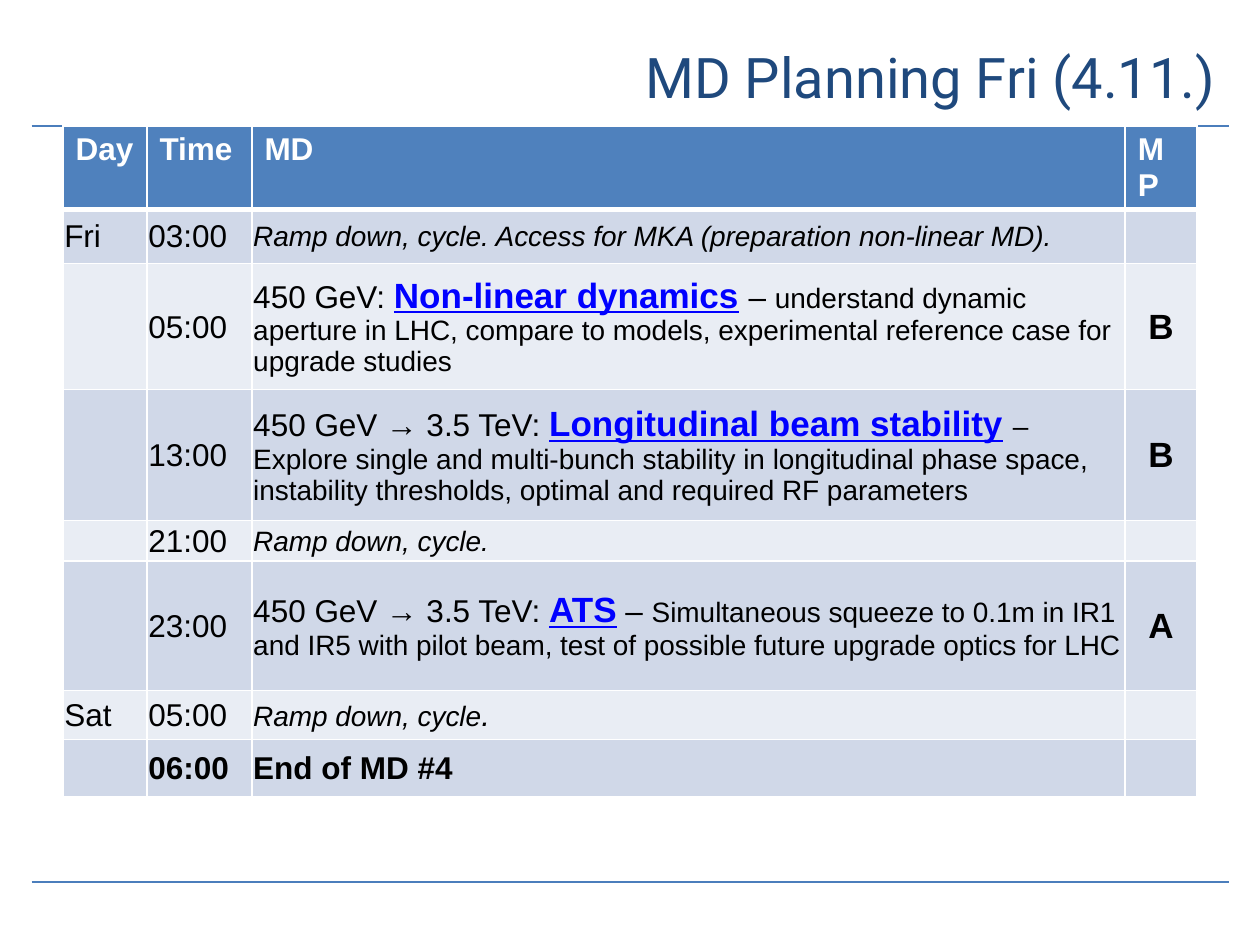
from lxml import etree
from pptx import Presentation
from pptx.dml.color import RGBColor
from pptx.enum.shapes import MSO_CONNECTOR
from pptx.enum.text import MSO_ANCHOR, PP_ALIGN
from pptx.oxml.ns import qn
from pptx.util import Pt

STRAIGHT = MSO_CONNECTOR.STRAIGHT
MIDDLE, TOP = MSO_ANCHOR.MIDDLE, MSO_ANCHOR.TOP
LEFT, CENTER, RIGHT = PP_ALIGN.LEFT, PP_ALIGN.CENTER, PP_ALIGN.RIGHT

# Content: a cell is a list of (text, style) runs
TITLE = "MD Planning Fri (4.11.)"
HEADER = ["Day", "Time", "MD", "MP"]
SCHEDULE = [
    ("Fri", "03:00", [("Ramp down, cycle. Access for MKA (preparation non-linear MD).", "note")], ""),
    ("", "05:00", [
        ("450 GeV: ", "body"), ("Non-linear dynamics", "topic"), (" ", "space"), ("– ", "body"),
        ("understand dynamic aperture in LHC, compare to models, experimental "
         "reference case for upgrade studies", "detail")], "B"),
    ("", "13:00", [
        ("450 GeV → 3.5 TeV: ", "body"), ("Longitudinal beam stability", "topic"), (" ", "space"),
        ("– Explore single and multi-bunch stability in longitudinal phase space, "
         "instability thresholds, optimal and required RF parameters", "detail")], "B"),
    ("", "21:00", [("Ramp down, cycle.", "note")], ""),
    ("", "23:00", [
        ("450 GeV → 3.5 TeV: ", "body"), ("ATS", "topic"), (" – ", "body"),
        ("Simultaneous squeeze to 0.1m in IR1 and IR5 with pilot beam, test of "
         "possible future upgrade optics for LHC", "detail")], "A"),
    ("Sat", "05:00", [("Ramp down, cycle", "note"), (".", "note_end")], ""),
    ("", "06:00", [("End of MD #4", "strong")], ""),
]

# Theme
THEME = {
    "rule": RGBColor(0x4B, 0x7E, 0xBC),
    "header_fill": RGBColor(0x4F, 0x81, 0xBD),
    "bands": [RGBColor(0xD0, 0xD8, 0xE8), RGBColor(0xE9, 0xED, 0xF4)],
    "border": "FFFFFF",
}
BLACK = RGBColor(0, 0, 0)
BLUE = RGBColor(0, 0, 0xFF)
STYLES = {
    "title": {"name": "Roboto", "size": Pt(32), "color": RGBColor(0x1F, 0x49, 0x7D)},
    "header": {"size": Pt(18), "bold": True, "color": RGBColor(0xFF, 0xFF, 0xFF)},
    "body": {"size": Pt(18)},
    "strong": {"size": Pt(18), "bold": True},
    "space": {"size": Pt(20)},
    "topic": {"size": Pt(20), "bold": True, "underline": True, "color": BLUE},
    "detail": {"size": Pt(16)},
    "note": {"size": Pt(16), "italic": True},
    "note_end": {"size": Pt(18), "italic": True},
    "grade": {"size": Pt(20), "bold": True},
}

# Layout in points
RULE_LEFT, RULE_RIGHT, RULE_TOPS = 18, 702, (72, 504)
TITLE_BOX = (126, 12, 576, 63)
TABLE_LEFT, TABLE_TOP = 36, 72
COLUMN_WIDTHS = [48, 60, 499, 41]
ROW_HEIGHTS = [29.5, 31, 72, 75, 23, 74, 28, 33]
BODY_MARGINS = {"margin_left": Pt(0.75), "margin_top": Pt(0.75),
                "margin_right": Pt(0.75), "margin_bottom": Pt(0)}


def format_font(font, style):
    values = {"name": "Arial", "color": BLACK} | STYLES[style]
    font.color.rgb = values.pop("color")
    for attribute, value in values.items():
        setattr(font, attribute, value)


def write_runs(paragraph, runs, alignment):
    paragraph.alignment = alignment
    for text, style in runs:
        run = paragraph.add_run()
        run.text = text
        format_font(run.font, style)
    if not runs:
        format_font(paragraph.font, "body")


def set_borders(cell, top, bottom):
    properties = cell._tc.get_or_add_tcPr()
    for side, width in {"lnL": 1, "lnR": 1, "lnT": top, "lnB": bottom}.items():
        line = etree.SubElement(properties, qn(f"a:{side}"), w=str(Pt(width)))
        fill = etree.SubElement(line, qn("a:solidFill"))
        etree.SubElement(fill, qn("a:srgbClr"), val=THEME["border"])


def fill_cell(cell, runs, alignment, row):
    set_borders(cell, top=3 if row == 1 else 1, bottom=3 if row == 0 else 1)
    cell.fill.solid()
    if row == 0:
        cell.fill.fore_color.rgb = THEME["header_fill"]
        cell.vertical_anchor = TOP
    else:
        cell.fill.fore_color.rgb = THEME["bands"][(row - 1) % 2]
        cell.vertical_anchor = MIDDLE
        for attribute, value in BODY_MARGINS.items():
            setattr(cell, attribute, value)
    write_runs(cell.text_frame.paragraphs[0], runs, alignment)


def add_rule(slide, top):
    rule = slide.shapes.add_connector(STRAIGHT, Pt(RULE_LEFT), Pt(top), Pt(RULE_RIGHT), Pt(top))
    rule.line.color.rgb = THEME["rule"]
    rule.line.width = Pt(1.5)
    etree.SubElement(rule._element.spPr, qn("a:effectLst"))


def add_title(slide):
    title = slide.shapes.title
    title.left, title.top, title.width, title.height = map(Pt, TITLE_BOX)
    title.text_frame.vertical_anchor = MIDDLE
    write_runs(title.text_frame.paragraphs[0], [(TITLE, "title")], RIGHT)


def add_schedule(slide):
    table = slide.shapes.add_table(
        len(ROW_HEIGHTS), len(COLUMN_WIDTHS), Pt(TABLE_LEFT), Pt(TABLE_TOP),
        Pt(sum(COLUMN_WIDTHS)), Pt(sum(ROW_HEIGHTS))).table
    for column, width in zip(table.columns, COLUMN_WIDTHS):
        column.width = Pt(width)
    for table_row, height in zip(table.rows, ROW_HEIGHTS):
        table_row.height = Pt(height)

    for column, text in enumerate(HEADER):
        fill_cell(table.cell(0, column), [(text, "header")], LEFT, 0)
    for row, (day, time, activity, grade) in enumerate(SCHEDULE, start=1):
        time_style = "strong" if row == len(SCHEDULE) else "body"
        cells = [
            ([(day, "body")] if day else [], LEFT),
            ([(time, time_style)], LEFT),
            (activity, LEFT),
            ([(grade, "grade")] if grade else [], CENTER),
        ]
        for column, (runs, alignment) in enumerate(cells):
            fill_cell(table.cell(row, column), runs, alignment, row)


def main():
    presentation = Presentation()
    presentation.slide_width, presentation.slide_height = Pt(720), Pt(540)
    slide = presentation.slides.add_slide(presentation.slide_layouts[5])
    for top in RULE_TOPS:
        add_rule(slide, top)
    add_title(slide)
    add_schedule(slide)
    presentation.save("out.pptx")


if __name__ == "__main__":
    main()
